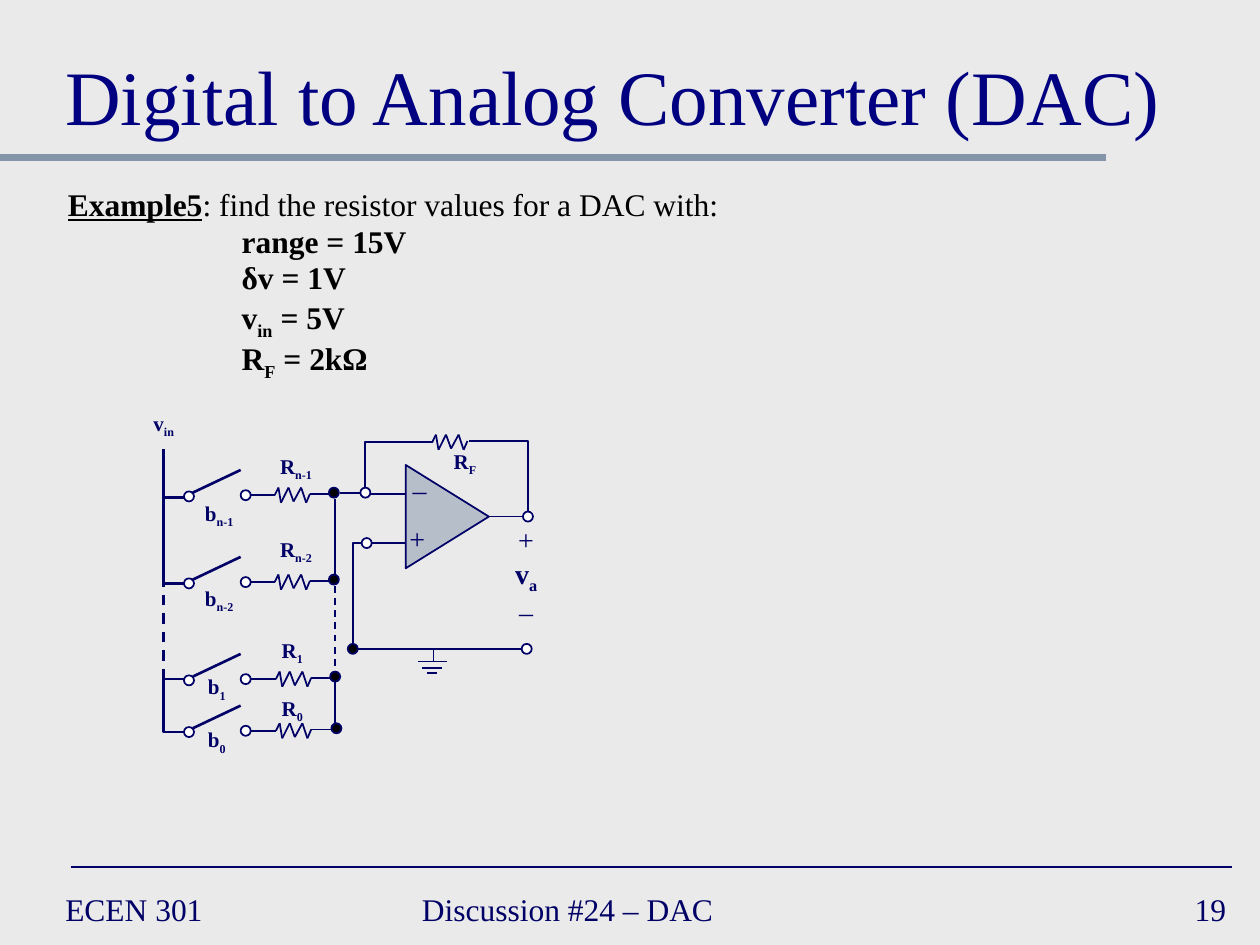
from itertools import pairwise

from lxml import etree
from pptx import Presentation
from pptx.dml.color import RGBColor
from pptx.enum.dml import MSO_LINE
from pptx.enum.shapes import MSO_CONNECTOR, MSO_SHAPE
from pptx.enum.text import MSO_ANCHOR, PP_ALIGN
from pptx.oxml.ns import qn
from pptx.util import Inches, Pt

STRAIGHT, ELBOW = MSO_CONNECTOR.STRAIGHT, MSO_CONNECTOR.ELBOW
OVAL, TRIANGLE = MSO_SHAPE.OVAL, MSO_SHAPE.ISOSCELES_TRIANGLE
LEFT, CENTER, RIGHT = PP_ALIGN.LEFT, PP_ALIGN.CENTER, PP_ALIGN.RIGHT
TOP, MIDDLE, BOTTOM = MSO_ANCHOR.TOP, MSO_ANCHOR.MIDDLE, MSO_ANCHOR.BOTTOM
DASH = MSO_LINE.DASH

COLORS = {"background": "EAEAEA", "ink": "000066", "title": "000080", "bar": "8495A9",
          "black": "000000", "white": "FFFFFF"}
FONT = "Times New Roman"
NODE = 0.08
ZIGZAG = [(0, 0), (0.03, -0.06), (0.05, 0.06), (0.11, -0.06),
          (0.15, 0.05), (0.21, -0.06), (0.25, 0.06), (0.28, -0.01)]


def color(name):
    return RGBColor.from_string(COLORS[name])


class CircuitSlide:
    def __init__(self, presentation):
        self.slide = presentation.slides.add_slide(presentation.slide_layouts[6])
        self.slide.background.fill.solid()
        self.slide.background.fill.fore_color.rgb = color("background")

    def text(self, left, top, width, height, paragraphs, size, ink="ink", align=LEFT,
             anchor=TOP, wrap=True):
        box = self.slide.shapes.add_textbox(Inches(left), Inches(top), Inches(width), Inches(height))
        frame = box.text_frame
        frame.word_wrap = wrap
        frame.vertical_anchor = anchor
        for index, pieces in enumerate(paragraphs):
            paragraph = frame.paragraphs[0] if index == 0 else frame.add_paragraph()
            paragraph.alignment = align
            paragraph.font.name = FONT
            paragraph.font.size = Pt(size)
            paragraph.font.color.rgb = color(ink)
            for content, style in pieces:
                run = paragraph.add_run()
                run.text = content
                if "bold" in style:
                    run.font.bold = True
                if "underline" in style:
                    run.font.underline = True
                if "sub" in style:
                    run.font._element.set("baseline", "-25000")
        return frame

    def label(self, center, top, name, subscript):
        self.text(center - 0.24, top, 0.48, 0.3, [[(name, "bold"), (subscript, "bold sub")]],
                  12, align=CENTER, wrap=False)

    def sign(self, center, top, symbol):
        self.text(center - 0.16, top, 0.32, 0.37, [[(symbol, "")]], 16, align=CENTER, wrap=False)

    def line(self, start, end, weight=1, ink="ink", dash=None, kind=STRAIGHT):
        connector = self.slide.shapes.add_connector(kind, *map(Inches, (*start, *end)))
        connector.line.color.rgb = color(ink)
        connector.line.width = Pt(weight)
        if dash:
            connector.line.dash_style = dash
        etree.SubElement(connector._element.spPr, qn("a:effectLst"))
        return connector

    def corner(self, start, end, weight=1):
        connector = self.line(start, end, weight, kind=ELBOW)
        connector._element.spPr.find(qn("a:prstGeom")).set("prst", "bentConnector2")

    def shape(self, kind, left, top, width, height, fill):
        shape = self.slide.shapes.add_shape(kind, *map(Inches, (left, top, width, height)))
        shape.shadow.inherit = False
        shape.fill.solid()
        shape.fill.fore_color.rgb = color(fill)
        shape.line.color.rgb = color("ink")
        shape.line.width = Pt(1)
        return shape

    def node(self, center_x, center_y, fill="white"):
        self.shape(OVAL, center_x - NODE / 2, center_y - NODE / 2, NODE, NODE, fill)

    def amplifier(self):
        triangle = self.shape(TRIANGLE, 3.14, 3.77, 0.82, 0.66, "bar")
        triangle.rotation = 90
        fill_color = triangle._element.spPr.find(qn("a:solidFill"))[0]
        etree.SubElement(fill_color, qn("a:alpha")).set("val", "50000")

    def resistor(self, left, middle):
        points = [(left + x, middle + y) for x, y in ZIGZAG]
        for start, end in pairwise(points):
            self.line(start, end)

    def branch(self, level, resistor_x, dot_x):
        self.node(1.5, level + 0.01)
        self.line((1.53, level - 0.02), (1.91, level - 0.2), 1.5)
        self.node(1.95, level)
        self.line((1.99, level), (resistor_x, level))
        self.resistor(resistor_x, level)
        self.line((dot_x - 0.04, level - 0.01), (resistor_x + 0.28, level - 0.01))
        self.node(dot_x, level - 0.02, "black")


def main():
    presentation = Presentation()
    presentation.slide_width = Inches(10)
    presentation.slide_height = Inches(7.5)
    page = CircuitSlide(presentation)

    page.line((0, 1.25), (8.78, 1.25), 4, "bar")
    page.line((0.56, 6.88), (9.78, 6.88))
    for left, width, content, align in [(0.42, 2.17, "ECEN 301", LEFT),
                                        (3.25, 3.83, "Discussion #24 – DAC", LEFT),
                                        (7.75, 2.08, "19", RIGHT)]:
        page.text(left, 7, width, 0.42, [[(content, "")]], 18, align=align, anchor=MIDDLE)
    page.text(0.42, 0.17, 9.17, 1, [[("Digital to Analog Converter (DAC)", "")]], 44,
              "title", anchor=BOTTOM)

    body = page.text(0.44, 1.48, 9.14, 1.54, [
        [("Example5", "bold underline"), (": find the resistor values for a DAC with:", "")],
        [("range = 15V", "bold")],
        [("δv = 1V", "bold")],
        [("v", "bold"), ("in", "bold sub"), (" = 5V", "bold")],
        [("R", "bold"), ("F", "bold sub"), (" = 2kΩ", "bold")],
    ], 18, "black")
    for index, paragraph in enumerate(body.paragraphs):
        paragraph.line_spacing = 0.8
        if index > 0:
            paragraph.space_before = Pt(3.6)
            paragraph._p.get_or_add_pPr().set("marL", str(Inches(1.38)))

    page.amplifier()
    page.sign(3.33, 3.7, "–")
    page.sign(3.31, 4.09, "+")
    for start, end in [((3.22, 4.31), (2.94, 4.31)), ((3.22, 3.92), (2.94, 3.92)),
                       ((4.15, 4.1), (3.87, 4.1)), ((4.14, 5.15), (2.84, 5.15)),
                       ((2.7, 3.91), (2.86, 3.91)), ((2.66, 3.96), (2.66, 4.57)),
                       ((2.66, 5.75), (2.66, 5.41)), ((3.44, 5.25), (3.44, 5.14)),
                       ((3.32, 5.25), (3.55, 5.25)), ((3.35, 5.3), (3.51, 5.3)),
                       ((3.39, 5.34), (3.47, 5.34))]:
        page.line(start, end)
    page.line((2.66, 4.65), (2.66, 5.33), dash=DASH)
    page.corner((2.87, 4.31), (2.8, 5.11))
    page.corner((3.44, 3.51), (2.9, 3.87))
    page.corner((3.72, 3.5), (4.19, 4.06))
    page.resistor(3.43, 3.51)
    for center in [(2.91, 4.31), (2.9, 3.91), (4.19, 4.1), (4.18, 5.15)]:
        page.node(*center)
    page.node(2.8, 5.15, "black")
    page.text(3.98, 4.1, 0.39, 0.9, [[("+", "")], [("v", "bold"), ("a", "bold sub")], [("–", "")]],
              16, align=CENTER, wrap=False)

    for level, resistor_x, dot_x in [(3.93, 2.18, 2.65), (4.62, 2.18, 2.65),
                                     (5.39, 2.19, 2.66), (5.8, 2.19, 2.67)]:
        page.branch(level, resistor_x, dot_x)
    for level in (3.95, 4.63, 5.39):
        page.line((1.46, level), (1.3, level), 1.5)
    page.corner((1.46, 5.81), (1.3, 5.39), 1.5)
    page.line((1.3, 5.39), (1.3, 4.62), 1.5, dash=DASH)
    page.line((1.3, 4.62), (1.3, 3.56), 1.5)

    for center, top, name, subscript in [
            (1.3, 3.21, "v", "in"), (3.69, 3.51, "R", "F"),
            (2.35, 3.55, "R", "n-1"), (2.35, 4.21, "R", "n-2"),
            (2.32, 5.01, "R", "1"), (2.32, 5.47, "R", "0"),
            (1.74, 3.92, "b", "n-1"), (1.74, 4.6, "b", "n-2"),
            (1.72, 5.3, "b", "1"), (1.72, 5.72, "b", "0")]:
        page.label(center, top, name, subscript)

    presentation.save("out.pptx")


if __name__ == "__main__":
    main()
